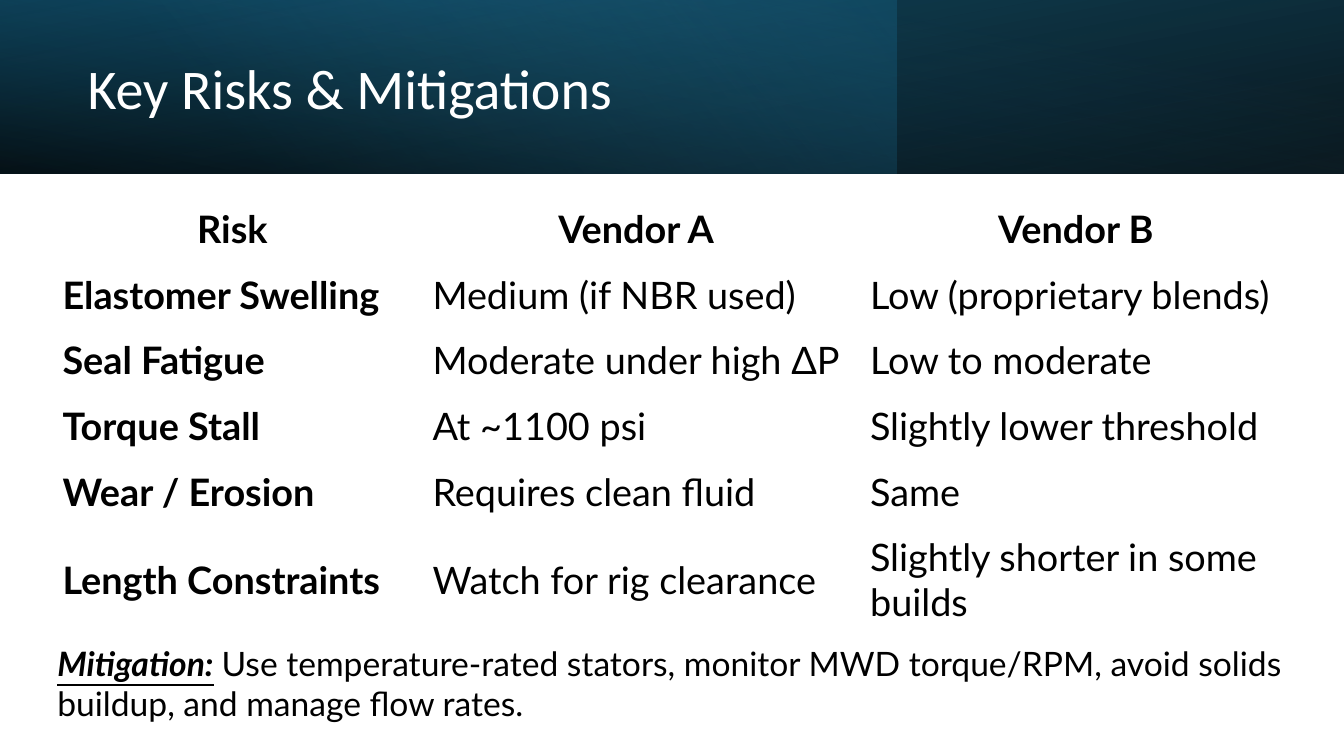
from dataclasses import dataclass

from lxml.etree import SubElement
from pptx import Presentation
from pptx.dml.color import RGBColor
from pptx.enum.shapes import MSO_SHAPE
from pptx.enum.text import MSO_ANCHOR, MSO_AUTO_SIZE, PP_ALIGN
from pptx.oxml.ns import qn
from pptx.slide import Slide
from pptx.text.text import _Paragraph as Paragraph
from pptx.util import Inches, Pt


@dataclass(frozen=True)
class Theme:
    black: str = "000000"
    white: str = "FFFFFF"
    navy: str = "104862"
    teal: str = "156082"
    sky: str = "46B1E1"
    title_font: str = "Calibri"
    body_font: str = "Lato"
    title_size: int = 40
    table_size: int = 27
    note_size: int = 24


@dataclass(frozen=True)
class Stop:
    position: float
    color: str
    opacity: int


@dataclass(frozen=True)
class Band:
    width: float
    angle: int
    stops: tuple[Stop, Stop]
    flipped: bool = False
    rotation: int = 0


@dataclass(frozen=True)
class Span:
    text: str
    size: int
    font: str = "Lato"
    color: str = "000000"
    bold: bool = False
    italic: bool = False
    underline: bool = False


THEME = Theme()
PAGE_WIDTH = 13.33
BAND_HEIGHT = 1.72
LEFT, CONTENT_WIDTH = 0.47, 12.39

BANDS = (
    Band(PAGE_WIDTH, 100, (Stop(0, THEME.black, 96), Stop(1, THEME.navy, 100)), True, 180),
    Band(8.89, 140, (Stop(0, THEME.teal, 41), Stop(0.74, THEME.sky, 0))),
    Band(PAGE_WIDTH, 260, (Stop(0, THEME.black, 63), Stop(0.78, THEME.teal, 15)), True),
)

RISKS = (
    ("Risk", "Vendor A", "Vendor B"),
    ("Elastomer Swelling", "Medium (if NBR used)", "Low (proprietary blends)"),
    ("Seal Fatigue", "Moderate under high ΔP", "Low to moderate"),
    ("Torque Stall", "At ~1100 psi", "Slightly lower threshold"),
    ("Wear / Erosion", "Requires clean fluid", "Same"),
    ("Length Constraints", "Watch for rig clearance", "Slightly shorter in some builds"),
)
COLUMN_WIDTHS = (3.67, 4.34, 4.38)
ROW_HEIGHTS = (0.65,) * 5 + (1.1,)

MITIGATION = (
    Span("Mitigation:", THEME.note_size, bold=True, italic=True, underline=True),
    Span(" ", THEME.note_size, italic=True),
    Span(
        "Use temperature-rated stators, monitor MWD torque/RPM, "
        "avoid solids buildup, and manage flow rates.",
        THEME.note_size,
    ),
)


def add_span(para: Paragraph, span: Span) -> None:
    run = para.add_run()
    run.text = span.text
    font = run.font
    font.name, font.size = span.font, Pt(span.size)
    font.bold, font.italic, font.underline = span.bold, span.italic, span.underline
    font.color.rgb = RGBColor.from_string(span.color)


def add_band(page: Slide, band: Band) -> None:
    shape = page.shapes.add_shape(
        MSO_SHAPE.RECTANGLE, 0, 0, Inches(band.width), Inches(BAND_HEIGHT)
    )
    shape.shadow.inherit = False
    shape.line.fill.background()
    shape.rotation = band.rotation
    if band.flipped:
        shape.element.spPr.xfrm.set("flipH", "1")
    shape.fill.gradient()
    shape.fill.gradient_angle = 360 - band.angle
    for gradient_stop, stop in zip(shape.fill.gradient_stops, band.stops):
        gradient_stop.position = stop.position
        gradient_stop.color.rgb = RGBColor.from_string(stop.color)
    colors = shape.element.spPr.iter(qn("a:srgbClr"))
    for color, stop in zip(list(colors), band.stops):
        SubElement(color, qn("a:alpha")).set("val", str(stop.opacity * 1000))


def add_title(page: Slide, text: str) -> None:
    title = page.shapes.title
    title.left, title.top = Inches(0.77), Inches(0.27)
    title.width, title.height = Inches(7.72), Inches(1.27)
    frame = title.text_frame
    frame.word_wrap = True
    frame.auto_size = MSO_AUTO_SIZE.NONE
    frame.vertical_anchor = MSO_ANCHOR.MIDDLE
    para = frame.paragraphs[0]
    para.alignment = PP_ALIGN.LEFT
    para.line_spacing = 0.9
    add_span(para, Span(text, THEME.title_size, THEME.title_font, THEME.white))
    title.element.getparent().append(title.element)


def add_risk_table(page: Slide) -> None:
    table = page.shapes.add_table(
        len(RISKS), len(COLUMN_WIDTHS), Inches(LEFT), Inches(1.95),
        Inches(CONTENT_WIDTH), Inches(sum(ROW_HEIGHTS)),
    ).table
    table.first_row = table.horz_banding = False
    for column, width in zip(table.columns, COLUMN_WIDTHS):
        column.width = Inches(width)
    for row, height in zip(table.rows, ROW_HEIGHTS):
        row.height = Inches(height)
    for row_index, texts in enumerate(RISKS):
        for column_index, text in enumerate(texts):
            cell = table.cell(row_index, column_index)
            cell.fill.background()
            cell.vertical_anchor = MSO_ANCHOR.MIDDLE
            cell.margin_left = cell.margin_right = Inches(0.15)
            cell.margin_top = cell.margin_bottom = Inches(0.07)
            is_header = row_index == 0
            para = cell.text_frame.paragraphs[0]
            para.alignment = PP_ALIGN.CENTER if is_header else PP_ALIGN.LEFT
            bold = is_header or column_index == 0
            add_span(para, Span(text, THEME.table_size, THEME.body_font, bold=bold))


def add_mitigation(page: Slide) -> None:
    box = page.shapes.add_textbox(
        Inches(LEFT), Inches(6.33), Inches(CONTENT_WIDTH), Inches(0.91)
    )
    box.text_frame.word_wrap = True
    box.text_frame.auto_size = MSO_AUTO_SIZE.SHAPE_TO_FIT_TEXT
    for span in MITIGATION:
        add_span(box.text_frame.paragraphs[0], span)


def main() -> None:
    deck = Presentation()
    deck.slide_width, deck.slide_height = Inches(PAGE_WIDTH), Inches(7.5)
    page = deck.slides.add_slide(deck.slide_layouts.get_by_name("Title Only"))
    for band in BANDS:
        add_band(page, band)
    add_title(page, "Key Risks & Mitigations")
    add_risk_table(page)
    add_mitigation(page)
    deck.save("out.pptx")


if __name__ == "__main__":
    main()
